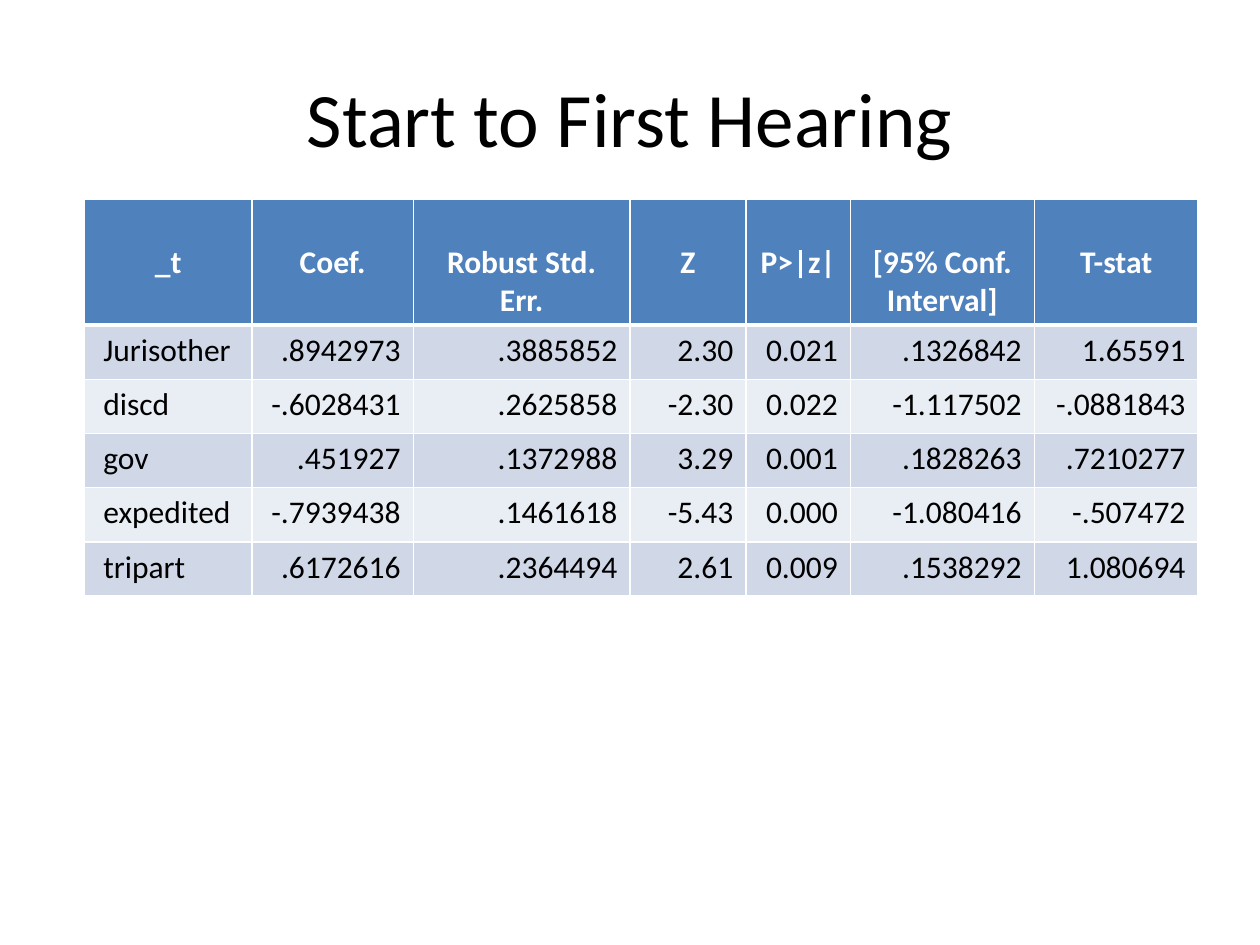
import pptx
import pptx.dml.color
import pptx.enum.text
import pptx.oxml
import pptx.oxml.ns
import pptx.util
from dataclasses import dataclass
from pptx.util import Inches


@dataclass(frozen=True)
class Theme:
    font: str = "Calibri"
    title_size: int = 44
    table_size: int = 18
    text: str = "000000"
    header_text: str = "FFFFFF"
    header_fill: str = "4F81BD"
    bands: tuple = ("D0D8E8", "E9EDF4")
    border: str = "FFFFFF"


theme = Theme()
PP_ALIGN = pptx.enum.text.PP_ALIGN


def style_paragraph(paragraph, size, color, align, bold=False):
    paragraph.alignment = align
    for run in paragraph.runs:
        run.font.name = theme.font
        run.font.size = pptx.util.Pt(size)
        run.font.bold = bold
        run.font.color.rgb = pptx.dml.color.RGBColor.from_string(color)


def set_borders(cell, top, bottom):
    properties = cell._tc.get_or_add_tcPr()
    for side, points in (("L", 1), ("R", 1), ("T", top), ("B", bottom)):
        properties.append(pptx.oxml.parse_xml(
            f'<a:ln{side} {pptx.oxml.ns.nsdecls("a")} w="{pptx.util.Pt(points)}">'
            f'<a:solidFill><a:srgbClr val="{theme.border}"/></a:solidFill>'
            f'</a:ln{side}>'))


presentation = pptx.Presentation()
presentation.slide_width = Inches(10)
presentation.slide_height = Inches(7.5)
slide = presentation.slides.add_slide(presentation.slide_layouts[6])

# Title
title = slide.shapes.add_textbox(Inches(0.5), Inches(0.3), Inches(9), Inches(1.25))
title.text_frame.word_wrap = True
title.text_frame.vertical_anchor = pptx.enum.text.MSO_ANCHOR.MIDDLE
title.text_frame.text = "Start to First Hearing"
style_paragraph(title.text_frame.paragraphs[0], theme.title_size, theme.text, PP_ALIGN.CENTER)

# Regression results
results = [
    ["_t", "Coef.", "Robust Std. Err.", "Z", "P>|z|", "[95% Conf. Interval]", "T-stat"],
    ["Jurisother", ".8942973", ".3885852", "2.30", "0.021", ".1326842", "1.65591"],
    ["discd", "-.6028431", ".2625858", "-2.30", "0.022", "-1.117502", "-.0881843"],
    ["gov", ".451927", ".1372988", "3.29", "0.001", ".1828263", ".7210277"],
    ["expedited", "-.7939438", ".1461618", "-5.43", "0.000", "-1.080416", "-.507472"],
    ["tripart", ".6172616", ".2364494", "2.61", "0.009", ".1538292", "1.080694"],
]
column_widths = [1.33, 1.28, 1.72, 0.92, 0.83, 1.46, 1.3]
row_heights = [1.0] + [0.43] * (len(results) - 1)

table = slide.shapes.add_table(
    len(results), len(column_widths), Inches(0.67), Inches(1.58),
    Inches(sum(column_widths)), Inches(sum(row_heights))).table
for column, width in zip(table.columns, column_widths):
    column.width = Inches(width)
for row, height in zip(table.rows, row_heights):
    row.height = Inches(height)

# Header, banded rows and borders
for row_index, values in enumerate(results):
    is_header = row_index == 0
    for column_index, value in enumerate(values):
        cell = table.cell(row_index, column_index)
        set_borders(cell, top=3 if row_index == 1 else 1, bottom=3 if is_header else 1)
        fill = theme.header_fill if is_header else theme.bands[(row_index - 1) % 2]
        cell.fill.solid()
        cell.fill.fore_color.rgb = pptx.dml.color.RGBColor.from_string(fill)
        cell.text_frame.text = value
        if is_header:
            align = PP_ALIGN.CENTER
            cell.margin_top = Inches(0.35)
        elif column_index == 0:
            align = PP_ALIGN.LEFT
            cell.margin_left = Inches(0.15)
        else:
            align = PP_ALIGN.RIGHT
        style_paragraph(cell.text_frame.paragraphs[0], theme.table_size,
                        theme.header_text if is_header else theme.text, align, bold=is_header)

presentation.save("out.pptx")
